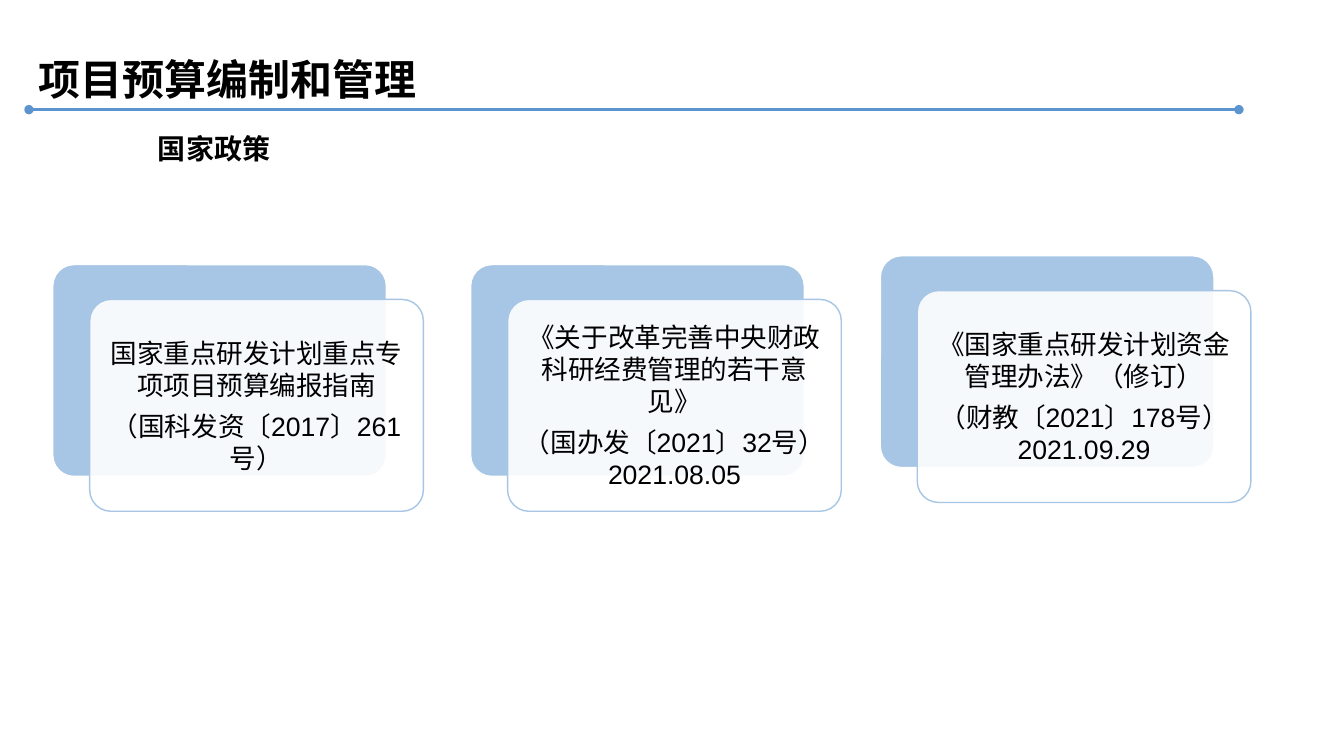
import pptx
import pptx.util
import pptx.dml.color
import pptx.enum.shapes
import pptx.enum.text
import pptx.oxml.ns
from lxml import etree

Pt = pptx.util.Pt
RGB = pptx.dml.color.RGBColor.from_string
qn = pptx.oxml.ns.qn
COLORS = {"line": "5B94CE", "panel": "A7C6E5", "white": "FFFFFF", "text": "000000"}


def add_run(p, text, font, **formats):
    """Add black text with one typeface for Latin and East Asian characters."""
    r = p.add_run()
    r.text = text
    r.font.color.rgb = RGB(COLORS["text"])
    for name, value in {"name": font, **formats}.items():
        setattr(r.font, name, value)
    latin = r.font._element.find(qn("a:latin"))
    ea = etree.Element(qn("a:ea"), typeface=font)
    latin.addnext(ea)


def add_panel(s, left, top, fill, line):
    sp = s.shapes.add_shape(pptx.enum.shapes.MSO_SHAPE.ROUNDED_RECTANGLE,
                            Pt(left), Pt(top), Pt(238.3), Pt(151.3))
    sp.adjustments[0] = 0.1
    sp.shadow.inherit = False
    sp.fill.solid()
    sp.fill.fore_color.rgb = RGB(COLORS[fill])
    sp.line.color.rgb = RGB(COLORS[line])
    sp.line.width = Pt(1)
    return sp


prs = pptx.Presentation()
prs.slide_width, prs.slide_height = Pt(960), Pt(540)
s = prs.slides.add_slide(prs.slide_layouts[6])

# Title rule with round ends
rule = s.shapes.add_connector(pptx.enum.shapes.MSO_CONNECTOR.STRAIGHT,
                              Pt(20.7), Pt(78.3), Pt(885), Pt(78.3))
rule.line.color.rgb = RGB(COLORS["line"])
rule.line.width = Pt(2.25)
for end in ("headEnd", "tailEnd"):
    etree.SubElement(rule.line._get_or_add_ln(), qn("a:" + end), type="oval")
etree.SubElement(rule._element.spPr, qn("a:effectLst"))

# Headings
headings = [
    ("项目预算编制和管理", (20.7, 16.6, 769.7, 54.7), "Arial", 30, 1.5),
    ("国家政策", (105.8, 90.7, 480.2, 31.7), "Noto Sans CJK SC", 20, 1),
]
for text, box, font, size, spacing in headings:
    tf = s.shapes.add_textbox(*map(Pt, box)).text_frame
    tf.word_wrap = True
    tf.auto_size = pptx.enum.text.MSO_AUTO_SIZE.SHAPE_TO_FIT_TEXT
    p = tf.paragraphs[0]
    p.line_spacing = spacing
    add_run(p, text, font, size=Pt(size), bold=True)

# Policy cards, each in front of an offset blue panel
policies = [
    (37.7, 189, "国家重点研发计划重点专项项目预算编报指南", "（国科发资〔2017〕261号）"),
    (336.2, 189, "《关于改革完善中央财政科研经费管理的若干意见》", "（国办发〔2021〕32号）2021.08.05"),
    (628.8, 182.7, "《国家重点研发计划资金管理办法》（修订）", "（财教〔2021〕178号）2021.09.29"),
]
for left, top, *lines in policies:
    add_panel(s, left, top, "panel", "white")
    card = add_panel(s, left + 26.4, top + 24.9, "white", "panel")
    color = card.fill._xPr.find(qn("a:solidFill"))[0]
    etree.SubElement(color, qn("a:alpha"), val="90000")
    tf = card.text_frame
    tf.word_wrap = True
    tf.vertical_anchor = pptx.enum.text.MSO_ANCHOR.MIDDLE
    for side in ("left", "right", "top", "bottom"):
        setattr(tf, "margin_" + side, Pt(1.3))
    for i, text in enumerate(lines):
        p = tf.add_paragraph() if i else tf.paragraphs[0]
        p.alignment = pptx.enum.text.PP_ALIGN.CENTER
        p.space_after = Pt(6.6)
        add_run(p, text, "Arial", size=Pt(19))

prs.save("out.pptx")
